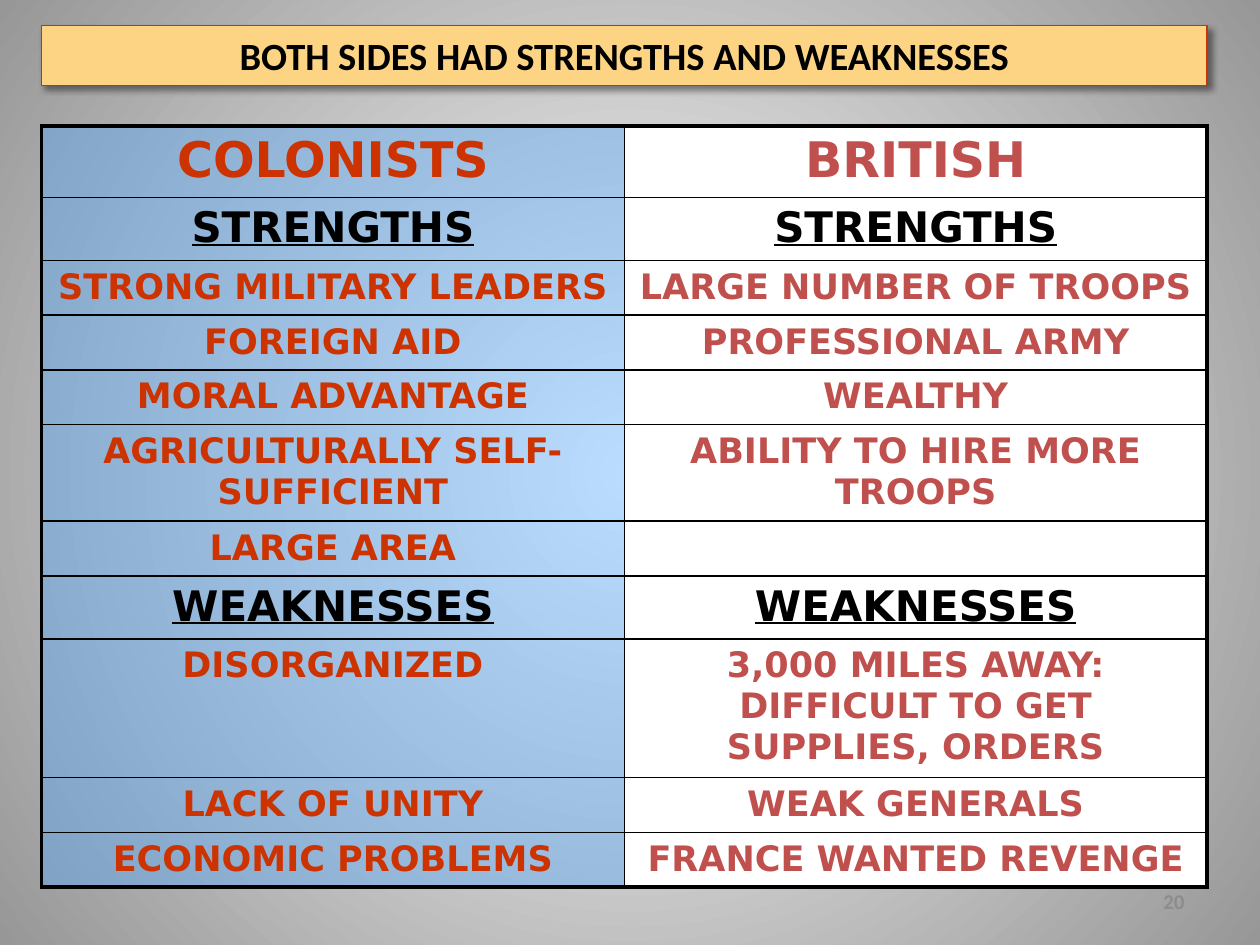
from lxml.etree import SubElement
from pptx import Presentation
from pptx.dml.color import RGBColor
from pptx.enum.text import MSO_ANCHOR, MSO_AUTO_SIZE, PP_ALIGN
from pptx.oxml import parse_xml
from pptx.oxml.ns import nsdecls, qn
from pptx.util import Inches, Pt

HEADER, SECTION, POINT = (28, 0.55), (24, 0.49), (20, 0.42)
COMPARISON = [
    (HEADER, "COLONISTS", "BRITISH"),
    (SECTION, "STRENGTHS", "STRENGTHS"),
    (POINT, "STRONG MILITARY LEADERS", "LARGE NUMBER OF TROOPS"),
    (POINT, "FOREIGN AID", "PROFESSIONAL ARMY"),
    (POINT, "MORAL ADVANTAGE", "WEALTHY"),
    (POINT, "AGRICULTURALLY SELF-SUFFICIENT", "ABILITY TO HIRE MORE TROOPS"),
    (POINT, "LARGE AREA", ""),
    (SECTION, "WEAKNESSES", "WEAKNESSES"),
    (POINT, "DISORGANIZED", "3,000 MILES AWAY: DIFFICULT TO GET SUPPLIES, ORDERS"),
    (POINT, "LACK OF UNITY", "WEAK GENERALS"),
    (POINT, "ECONOMIC PROBLEMS", "FRANCE WANTED REVENGE"),
]


def color(value):
    return RGBColor.from_string(value)


def write(frame, text, size=20, font="DejaVu Sans", ink="000000",
          underline=False, align=PP_ALIGN.CENTER):
    paragraph = frame.paragraphs[0]
    paragraph.alignment = align
    paragraph.font.size = Pt(size)
    if not text:
        return
    run = paragraph.add_run()
    run.text = text
    run.font.name = font
    run.font.size = Pt(size)
    run.font.bold = True
    run.font.underline = underline
    run.font.color.rgb = color(ink)


class ComparisonSlide:
    left, width = Inches(0.33), Inches(9.25)
    inks = ("CC3300", "C0504D")
    fills = (("4FA7FF", 39), ("FFFFFF", 100))
    thin, thick = 1, 2.25

    def __init__(self, deck):
        self.slide = deck.slides.add_slide(deck.slide_layouts[5])

    def background(self, center, edge):
        fill = self.slide.background.fill
        fill.gradient()
        for stop, position, shade in zip(fill.gradient_stops, (0, 1), (center, edge)):
            stop.position = position
            stop.color.rgb = color(shade)
        gradient = self.slide.element.find(".//" + qn("a:gradFill"))
        linear = gradient.find(qn("a:lin"))
        gradient.replace(linear, parse_xml(
            f'<a:path {nsdecls("a")} path="circle">'
            '<a:fillToRect l="50000" t="50000" r="50000" b="50000"/></a:path>'))

    def title(self, text):
        banner = self.slide.shapes.title
        banner.left, banner.top = self.left, Inches(0.2)
        banner.width, banner.height = self.width, Inches(0.48)
        banner.fill.solid()
        banner.fill.fore_color.rgb = color("FDD483")
        banner.line.color.rgb = color("CC3300")
        banner.line.width = Pt(0.75)
        banner.element.spPr.append(parse_xml(
            f'<a:effectLst {nsdecls("a")}>'
            f'<a:outerShdw blurRad="{Pt(4)}" dist="{Pt(3)}" dir="2700000" algn="tl">'
            '<a:srgbClr val="000000"><a:alpha val="43000"/></a:srgbClr>'
            '</a:outerShdw></a:effectLst>'))
        frame = banner.text_frame
        frame.word_wrap = True
        frame.auto_size = MSO_AUTO_SIZE.NONE
        frame.vertical_anchor = MSO_ANCHOR.MIDDLE
        write(frame, text, size=22, font="Calibri")

    def table(self, rows, top):
        heights = [Inches(height) for (_, height), *_ in rows]
        table = self.slide.shapes.add_table(
            len(rows), 2, self.left, top, self.width, sum(heights)).table
        table.first_row = table.horz_banding = False
        last = len(rows) - 1
        for row, ((size, _), *sides) in enumerate(rows):
            table.rows[row].height = heights[row]
            section = (size, _) == SECTION
            for column, text in enumerate(sides):
                cell = table.cell(row, column)
                ink = "000000" if section else self.inks[column]
                write(cell.text_frame, text, size=size, ink=ink, underline=section)
                self.cell_fill(cell, *self.fills[column])
                self.cell_borders(cell, L=column == 0, R=column == 1,
                                  T=row == 0, B=row == last)

    def cell_fill(self, cell, shade, opacity):
        cell.fill.solid()
        cell.fill.fore_color.rgb = color(shade)
        if opacity < 100:
            tint = cell.fill._xPr.find(".//" + qn("a:srgbClr"))
            SubElement(tint, qn("a:alpha")).set("val", str(opacity * 1000))

    def cell_borders(self, cell, **outer_edges):
        properties = cell._tc.get_or_add_tcPr()
        for index, (edge, outer) in enumerate(outer_edges.items()):
            width = Pt(self.thick if outer else self.thin)
            properties.insert(index, parse_xml(
                f'<a:ln{edge} {nsdecls("a")} w="{width}"><a:solidFill>'
                f'<a:srgbClr val="000000"/></a:solidFill></a:ln{edge}>'))

    def page_number(self, text):
        box = self.slide.shapes.add_textbox(
            Inches(7.17), Inches(6.95), Inches(2.33), Inches(0.4))
        frame = box.text_frame
        frame.word_wrap = True
        frame.vertical_anchor = MSO_ANCHOR.MIDDLE
        write(frame, text, size=12, font="Calibri", ink="8C8C8C", align=PP_ALIGN.RIGHT)


def main():
    deck = Presentation()
    deck.slide_width, deck.slide_height = Inches(10), Inches(7.5)
    slide = ComparisonSlide(deck)
    slide.background("FFFFFF", "979797")
    slide.page_number("20")
    slide.table(COMPARISON, Inches(1))
    slide.title("BOTH SIDES HAD STRENGTHS AND WEAKNESSES")
    deck.save("out.pptx")


if __name__ == "__main__":
    main()
